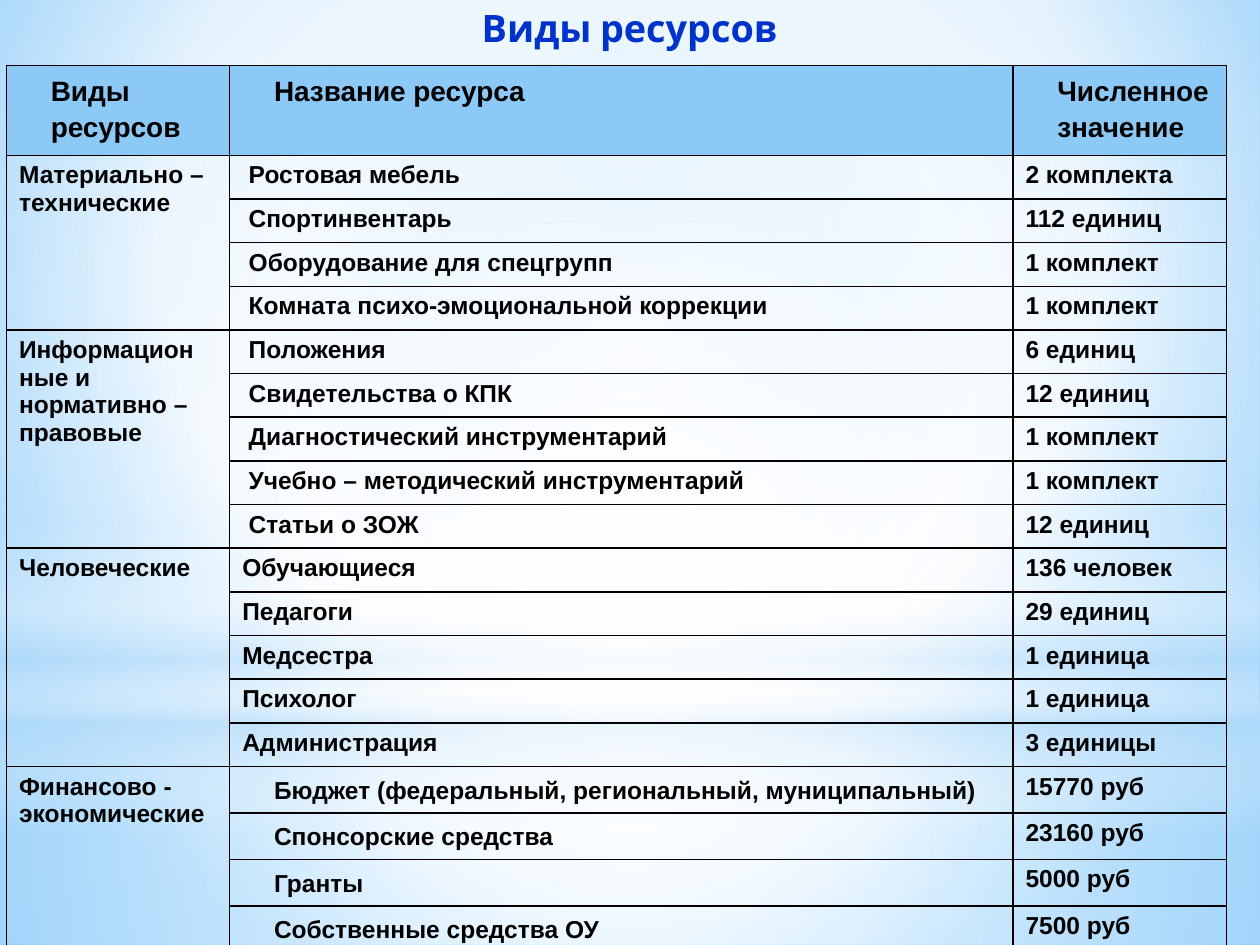
from lxml import etree
from pptx import Presentation
from pptx.dml.color import RGBColor
from pptx.enum.shapes import MSO_SHAPE
from pptx.enum.text import MSO_ANCHOR, PP_ALIGN
from pptx.oxml.ns import qn
from pptx.util import Cm, Pt

RECT, OVAL = MSO_SHAPE.RECTANGLE, MSO_SHAPE.OVAL
MIDDLE = MSO_ANCHOR.MIDDLE
CENTER, JUSTIFY, LEFT = PP_ALIGN.CENTER, PP_ALIGN.JUSTIFY, PP_ALIGN.LEFT

COLORS = {"title": "0033CC", "text": "000000", "header": "8CC9F7", "border": "000000",
          "white": "FFFFFF", "haze": "B4DCFA", "sky": "9ED5FF", "deep": "5BB9FF"}

TITLE = "Виды ресурсов"
HEADER = ["Виды ресурсов ", "Название ресурса ", "Численное значение "]
GROUPS = [
    (["Материально – технические"], "inset", [
        ("Ростовая мебель", "2 комплекта"),
        ("Спортинвентарь", "112 единиц"),
        ("Оборудование для спецгрупп", "1 комплект"),
        ("Комната психо-эмоциональной коррекции", "1 комплект")]),
    (["Информацион", "ные и нормативно – правовые"], "inset", [
        ("Положения", "6 единиц"),
        ("Свидетельства о КПК", "12 единиц"),
        ("Диагностический инструментарий", "1 комплект"),
        ("Учебно – методический инструментарий", "1 комплект"),
        ("Статьи о ЗОЖ", "12 единиц")]),
    (["Человеческие"], "plain", [
        ("Обучающиеся", "136 человек"),
        ("Педагоги", "29 единиц"),
        ("Медсестра", "1 единица"),
        ("Психолог", "1 единица"),
        ("Администрация", "3 единицы")]),
    (["Финансово - экономические"], "indented", [
        ("Бюджет (федеральный, региональный, муниципальный)", "15770 руб"),
        ("Спонсорские средства", "23160 руб"),
        ("Гранты", "5000 руб"),
        ("Собственные средства ОУ", "7500 руб")]),
]
STYLES = {
    "header": dict(size=16, align=JUSTIFY, indent=0.64, line=1.15),
    "plain": dict(),
    "inset": dict(indent=0.13, after=3),
    "indented": dict(indent=0.64, line=1.15),
}
COL_WIDTHS = [4.5, 15.79, 4.3]
HEADER_H, ROW_H, INDENTED_H = 1.81, 0.88, 0.91

CENTRE = (50, 50, 50, 50)
SKY = [(0, "sky", 100), (60, "white", 100), (100, "deep", 100)]
GLOWS = [
    (RECT, (0, 14.17, 25.4, 4.88),
     [(0, "white", 91), (37, "white", 76), (100, "haze", 79)], CENTRE),
    (RECT, (0, 0, 25.4, 14.17),
     [(0, "white", 89), (48, "white", 62), (100, "haze", 79)], CENTRE),
    (RECT, (0, 10.46, 25.4, 6.35),
     [(0, "white", 0), (29, "white", 30), (45, "haze", 40),
      (55, "white", 26), (65, "haze", 60), (100, "white", 0)], None),
    (OVAL, (0, 4.45, 25.4, 14.17), [(0, "white", 100), (56, "white", 0)], CENTRE),
]


def sub(parent, tag, **attrs):
    return etree.SubElement(parent, qn(tag), {k: str(v) for k, v in attrs.items()})


def set_gradient(fill, owner, stops, focus):
    fill.gradient()
    grad = owner.find(".//" + qn("a:gradFill"))
    for child in list(grad):
        grad.remove(child)
    stop_list = sub(grad, "a:gsLst")
    for pos, color, opacity in stops:
        stop = sub(stop_list, "a:gs", pos=pos * 1000)
        clr = sub(stop, "a:srgbClr", val=COLORS[color])
        if opacity < 100:
            sub(clr, "a:alpha", val=opacity * 1000)
    if focus:
        way = sub(grad, "a:path", path="circle")
        sub(way, "a:fillToRect", **{k: v * 1000 for k, v in zip("ltrb", focus)})
    else:
        sub(grad, "a:lin", ang=5400000, scaled=0)


def add_run(p, text, size, font, color):
    r = p.add_run()
    r.text = text
    r.font.size, r.font.name, r.font.bold = Pt(size), font, True
    r.font.color.rgb = RGBColor.from_string(COLORS[color])


def write_cell(cell, texts, size=14, align=LEFT, indent=0, line=1.0, after=0):
    tf = cell.text_frame
    for i, text in enumerate(texts):
        p = tf.add_paragraph() if i else tf.paragraphs[0]
        p.alignment, p.line_spacing, p.space_after = align, line, Pt(after)
        p._p.get_or_add_pPr().set("marL", str(Cm(indent)))
        add_run(p, text, size, "Arial", "text")


def style_cell(cell, is_header):
    pr = cell._tc.get_or_add_tcPr()
    for side in ("a:lnL", "a:lnR", "a:lnT", "a:lnB"):
        ln = sub(pr, side, w=Pt(1))
        sub(sub(ln, "a:solidFill"), "a:srgbClr", val=COLORS["border"])
    if is_header:
        cell.fill.solid()
        cell.fill.fore_color.rgb = RGBColor.from_string(COLORS["header"])
    else:
        cell.fill.background()


def add_resource_table(slide):
    heights = [HEADER_H] + [INDENTED_H if style == "indented" else ROW_H
                            for _, style, items in GROUPS for _ in items]
    frame = slide.shapes.add_table(len(heights), len(COL_WIDTHS), Cm(0.13), Cm(1.32),
                                   Cm(sum(COL_WIDTHS)), Cm(sum(heights)))
    table = frame.table
    table.first_row = table.horz_banding = False
    for col, width in zip(table.columns, COL_WIDTHS):
        col.width = Cm(width)
    for i, (row, height) in enumerate(zip(table.rows, heights)):
        row.height = Cm(height)
        for cell in row.cells:
            style_cell(cell, i == 0)
    for cell, text in zip(table.rows[0].cells, HEADER):
        write_cell(cell, [text], **STYLES["header"])
    top = 1
    for kind, style, items in GROUPS:
        table.cell(top, 0).merge(table.cell(top + len(items) - 1, 0))
        write_cell(table.cell(top, 0), kind)
        for i, (name, value) in enumerate(items, top):
            write_cell(table.cell(i, 1), [name], **STYLES[style])
            write_cell(table.cell(i, 2), [value])
        top += len(items)


def main():
    prs = Presentation()
    prs.slide_width, prs.slide_height = Cm(25.4), Cm(19.05)
    slide = prs.slides.add_slide(prs.slide_layouts[6])
    set_gradient(slide.background.fill, slide._element, SKY, (20, 10, 20, 60))
    for shape, box, stops, focus in GLOWS:
        s = slide.shapes.add_shape(shape, *map(Cm, box))
        s.shadow.inherit = False
        s.line.fill.background()
        set_gradient(s.fill, s._element.spPr, stops, focus)

    tf = slide.shapes.add_textbox(Cm(1.19), Cm(0), Cm(23.01), Cm(1.12)).text_frame
    tf.word_wrap, tf.vertical_anchor = True, MIDDLE
    tf.margin_top = tf.margin_bottom = 0
    p = tf.paragraphs[0]
    p.alignment = CENTER
    add_run(p, TITLE, 21.6, "Cabin", "title")

    add_resource_table(slide)
    prs.save("out.pptx")


if __name__ == "__main__":
    main()
